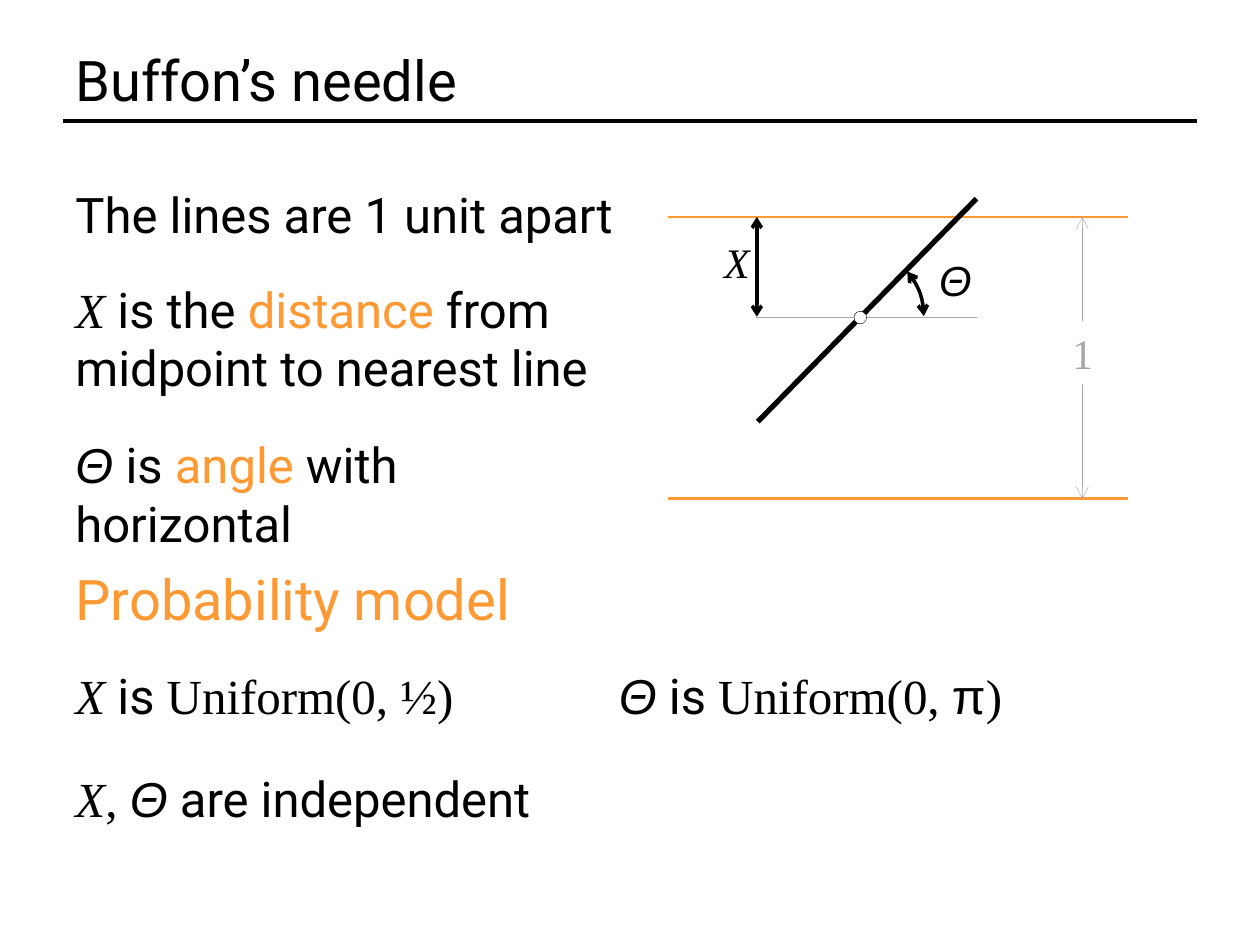
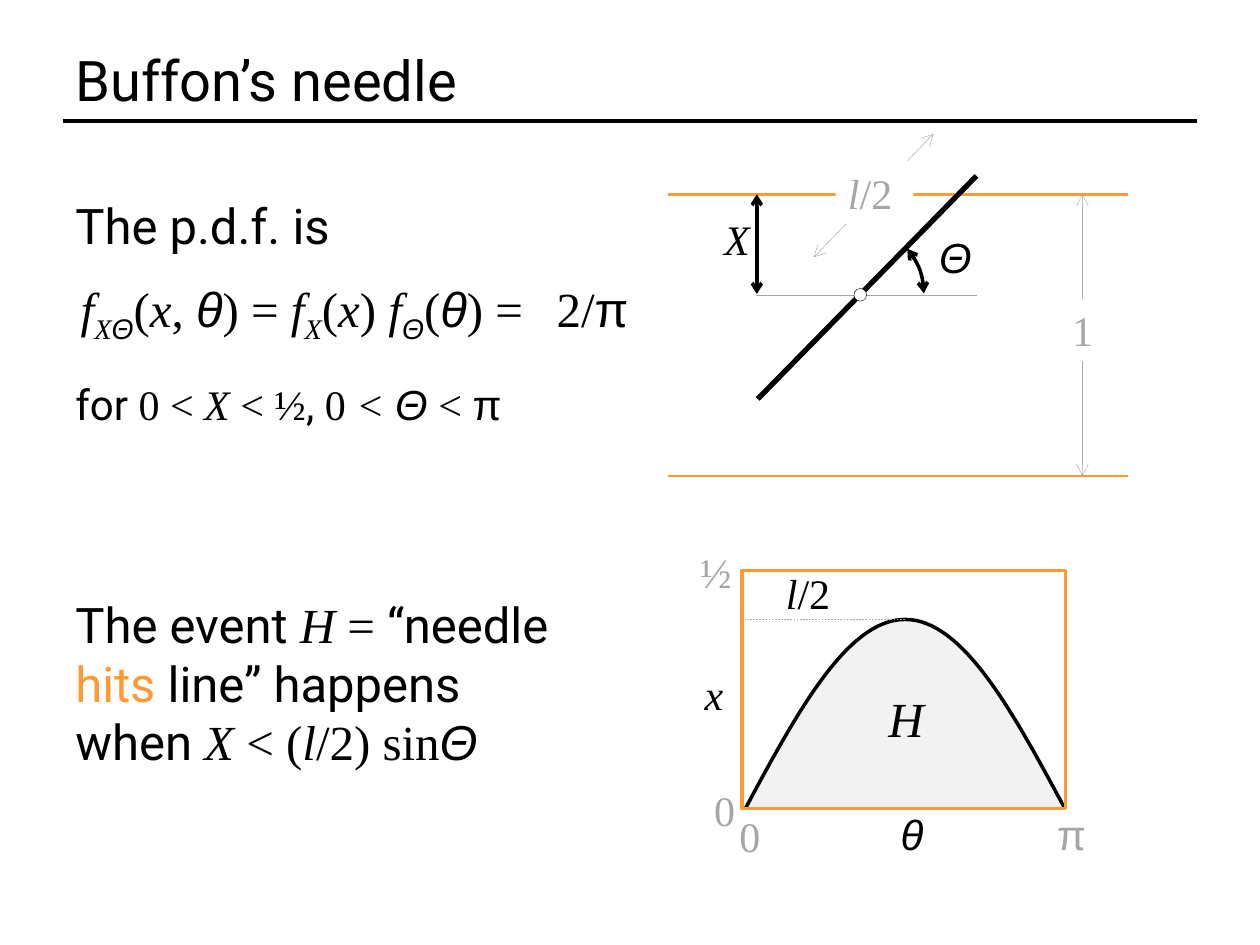
from math import pi, sin

from lxml.etree import SubElement
from pptx import Presentation
from pptx.dml.color import RGBColor
from pptx.enum.dml import MSO_LINE
from pptx.enum.shapes import MSO_CONNECTOR, MSO_SHAPE
from pptx.enum.text import MSO_ANCHOR, PP_ALIGN
from pptx.oxml.ns import qn
from pptx.util import Pt

COLORS = {"black": "000000", "orange": "FF9933", "gray": "A6A6A6",
          "pale": "F2F2F2", "white": "FFFFFF"}
STYLES = {
    "text": ("Roboto", False),
    "accent": ("Roboto", False),
    "num": ("Times New Roman", False),
    "var": ("Times New Roman", True),
    "var_sub": ("Times New Roman", True),
    "greek": ("Arial", True),
    "greek_sub": ("Arial", True),
    "pi": ("Arial", False),
}


def write(slide, box, size, runs, color="black", align=PP_ALIGN.LEFT, wrap=True):
    label = slide.shapes.add_textbox(*map(Pt, box))
    label.text_frame.word_wrap = wrap
    paragraph = label.text_frame.paragraphs[0]
    paragraph.alignment = align
    paragraph.font.size = Pt(size)
    paragraph.font.color.rgb = RGBColor.from_string(COLORS[color])
    for text, style in runs:
        if text == "\n":
            paragraph.add_line_break()
            continue
        run = paragraph.add_run()
        run.text = text
        font = paragraph.font if len(runs) == 1 else run.font
        font.name, font.italic = STYLES[style]
        if style == "accent":
            font.color.rgb = RGBColor.from_string(COLORS["orange"])
        if style.endswith("_sub"):
            run._r.get_or_add_rPr().set("baseline", "-25000")
    return label


def stroke(shape, color, width, arrows=False):
    shape.line.color.rgb = RGBColor.from_string(COLORS[color])
    shape.line.width = Pt(width)
    properties = shape._element.spPr
    if arrows:
        for end in ("a:headEnd", "a:tailEnd"):
            SubElement(properties.find(qn("a:ln")), qn(end), type="arrow")
    SubElement(properties, qn("a:effectLst"))
    return shape


deck = Presentation()
deck.slide_width, deck.slide_height = Pt(720), Pt(540)
model, event = [deck.slides.add_slide(deck.slide_layouts[6]) for _ in range(2)]

for slide, top in ((model, 124), (event, 111)):
    title = write(slide, (36, 21.6, 648, 47.5), 32, [("Buffon’s needle", "text")])
    title.text_frame.vertical_anchor = MSO_ANCHOR.MIDDLE
    bottom, middle = top + 161, top + 57.5
    lines = [
        ((36, 69.3, 684, 69.3), "black", 2, False),
        ((382, top, 644.5, top), "orange", 1.5, False),
        ((382, bottom, 644.5, bottom), "orange", 1.5, False),
        ((618.5, top, 618.5, bottom), "gray", 0.25, True),
        ((433, top + 117, 558, top - 10.5), "black", 3, False),
        ((558, middle, 432, middle), "gray", 0.25, False),
        ((432.5, top, 432.5, middle - 0.5), "black", 2, True),
    ]
    if slide is event:
        lines.append(((533.5, 76.5, 465, 147), "gray", 0.25, True))
    for ends, color, width, arrows in lines:
        connector = slide.shapes.add_connector(MSO_CONNECTOR.STRAIGHT, *map(Pt, ends))
        stroke(connector, color, width, arrows)

    midpoint = slide.shapes.add_shape(
        MSO_SHAPE.OVAL, Pt(488), Pt(middle - 3.6), Pt(7.2), Pt(7.2))
    midpoint.fill.solid()
    midpoint.fill.fore_color.rgb = RGBColor.from_string(COLORS["white"])
    stroke(midpoint, "black", 0.25)

    angle = slide.shapes.add_shape(
        MSO_SHAPE.ARC, Pt(448), Pt(top + 17), Pt(80), Pt(80))
    angle.adjustments[0], angle.adjustments[1] = 191.85, 215.69
    angle.fill.background()
    stroke(angle, "black", 2, arrows=True)

    write(slide, (397.5, top + 7.5, 38, 36), 24, [("X", "var")],
          align=PP_ALIGN.RIGHT, wrap=False)
    write(slide, (520.5, top + 18, 42, 36), 24, [("Θ", "greek")],
          align=PP_ALIGN.RIGHT, wrap=False)
    masks = [write(slide, (605.5, top + 59.5, 26, 36), 24, [("1", "num")],
                   "gray", wrap=False)]
    if slide is event:
        masks.append(write(slide, (477.5, 92, 44.5, 36), 24,
                           [("l", "var"), ("/2", "num")], "gray", wrap=False))
    for mask in masks:
        mask.fill.solid()
        mask.fill.fore_color.rgb = RGBColor.from_string(COLORS["white"])

write(model, (36, 319, 294, 46), 32, [("Probability model", "accent")], "orange")
for left, top, height, runs in [
    (36, 102, 41, [("The lines are 1 unit apart", "text")]),
    (36, 156, 75, [("X", "var"), (" is the ", "text"), ("distance", "accent"),
                   (" from midpoint to nearest line", "text")]),
    (36, 245, 75, [("Θ", "greek"), (" is ", "text"), ("angle", "accent"),
                   (" with horizontal", "text")]),
    (36, 377, 41, [("X", "var"), (" is ", "text"), ("Uniform(0, ½)", "num")]),
    (346.5, 377, 41, [("Θ", "greek"), (" is ", "text"), ("Uniform(0, ", "num"),
                      ("π", "pi"), (")", "num")]),
    (36, 435.5, 41, [("X", "var"), (", ", "num"), ("Θ", "greek"),
                     (" are independent", "text")]),
]:
    write(model, (left, top, 326, height), 28, runs)

write(event, (36, 108, 326, 41), 28, [("The p.d.f. is", "text")])
write(event, (36, 155.5, 280, 41), 28, [
    ("f", "var"), ("X", "var_sub"), ("Θ", "greek_sub"), ("(", "num"), ("x", "var"),
    (", ", "num"), ("θ", "greek"), (") = ", "num"), ("f", "var"), ("X", "var_sub"),
    ("(", "num"), ("x", "var"), (") ", "num"), ("f", "var"), ("Θ", "greek_sub"),
    ("(", "num"), ("θ", "greek"), (") = ", "num"),
], align=PP_ALIGN.CENTER, wrap=False)
write(event, (311, 155.5, 57.5, 41), 28, [("2/", "num"), ("π", "pi")], wrap=False)
write(event, (36, 212.5, 346, 36), 24, [
    ("for ", "text"), ("0 < ", "num"), ("X", "var"), (" < ½", "num"), (", ", "text"),
    ("0", "num"), (" < ", "var"), ("Θ", "greek"), (" < ", "num"), ("π", "pi")])
write(event, (36, 336, 326, 109), 28, [
    ("The event ", "text"), ("H ", "var"), ("= ", "num"), ("“needle", "text"),
    ("\n", "text"), ("hits ", "accent"), ("line” happens", "text"),
    ("\n", "text"), ("when ", "text"), ("X ", "var"), ("< (", "num"), ("l", "var"),
    ("/2) sin", "num"), ("Θ", "greek")])

curve_left, curve_base, curve_width, curve_height = 426, 462, 182.5, 108
steps = 60
curve = [(Pt(curve_left + curve_width * i / steps),
          Pt(curve_base - curve_height * sin(pi * i / steps)))
         for i in range(steps + 1)]
outline = event.shapes.build_freeform(*curve[0])
outline.add_line_segments(curve[1:], close=False)
hit_region = outline.convert_to_shape()
hit_region.fill.solid()
hit_region.fill.fore_color.rgb = RGBColor.from_string(COLORS["pale"])
stroke(hit_region, "black", 2)

sample_space = event.shapes.add_shape(
    MSO_SHAPE.RECTANGLE, Pt(424), Pt(326), Pt(185), Pt(136))
sample_space.fill.background()
stroke(sample_space, "orange", 2)

peak = event.shapes.add_connector(
    MSO_CONNECTOR.STRAIGHT, Pt(517), Pt(354), Pt(425.5), Pt(354))
stroke(peak, "gray", 0.25)
peak.line.dash_style = MSO_LINE.DASH

for left, top, width, size, runs, color in [
    (507.5, 458.5, 32, 24, [("θ", "greek")], "black"),
    (395.5, 378.5, 29, 24, [("x", "var")], "black"),
    (415.5, 459.5, 19, 24, [("0", "num")], "gray"),
    (597, 458.5, 28, 24, [("π", "pi")], "gray"),
    (393, 309, 34.5, 24, [("½", "num")], "gray"),
    (401, 445, 19, 24, [("0", "num")], "gray"),
    (500.5, 390, 39.5, 28, [("H", "var")], "black"),
    (442, 320.5, 44.5, 24, [("l", "var"), ("/2", "num")], "black"),
]:
    write(event, (left, top, width, size * 1.5), size, runs, color, wrap=False)

deck.save("out.pptx")
